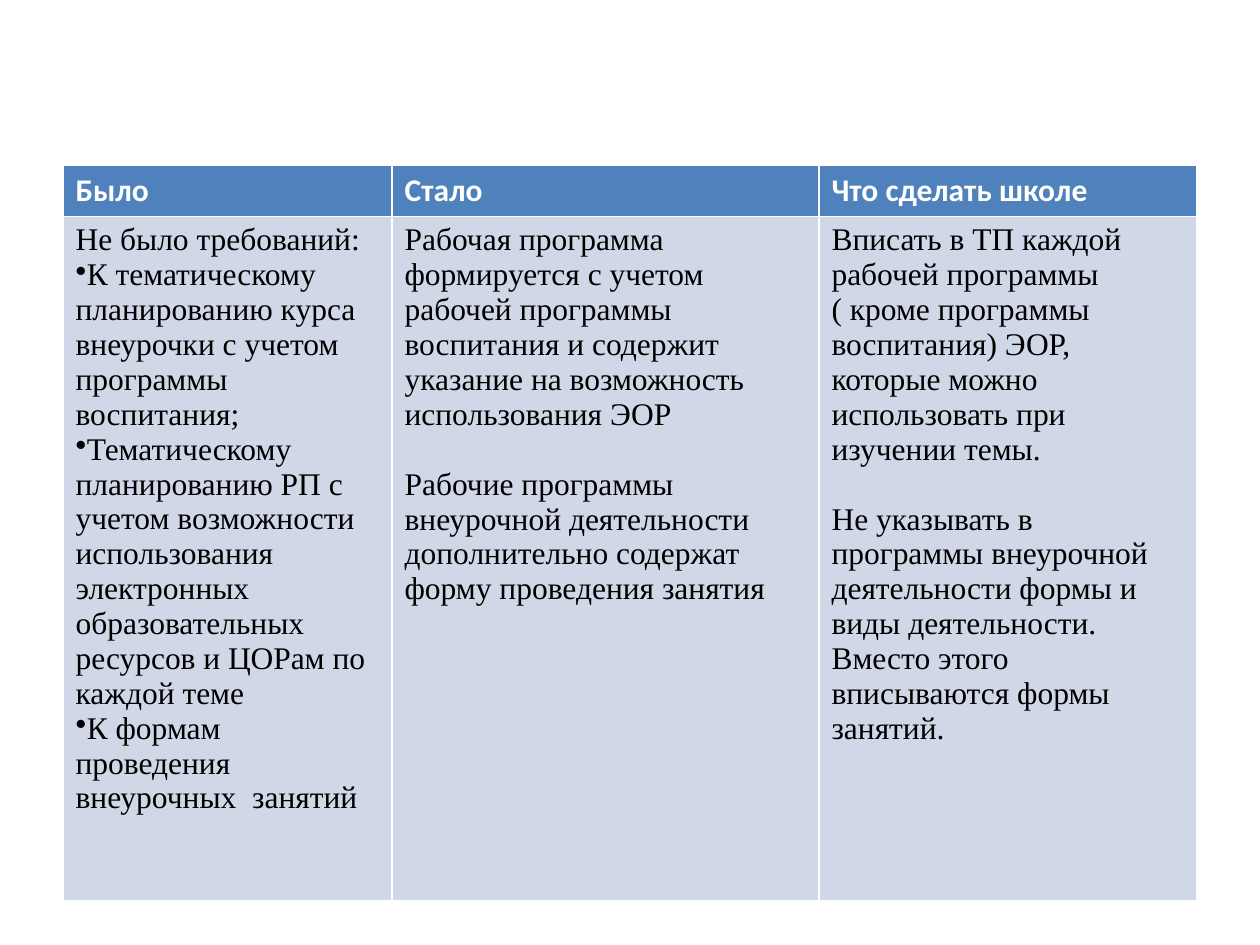
from lxml.etree import SubElement
from pptx import Presentation
from pptx.dml.color import RGBColor
from pptx.oxml.ns import qn
from pptx.util import Pt

WHITE = RGBColor(0xFF, 0xFF, 0xFF)
BLACK = RGBColor(0, 0, 0)
BLUE = RGBColor(0x4F, 0x81, 0xBD)
PALE = RGBColor(0xD0, 0xD8, 0xE8)

HEAD = {"name": "Calibri", "size": Pt(18), "bold": True}
BODY = {"name": "Times New Roman", "size": Pt(18), "bold": False}
WIDTHS = [188, 244, 216]
HEIGHTS = [28.8, 391.2]
GAP = 20

PLAIN, BULLET, APART = "plain", "bullet", "apart"
TITLES = ["Было", "Стало", "Что сделать школе"]
TEXTS = [
    [
        (PLAIN, "Не было требований:"),
        (BULLET, "К тематическому планированию курса внеурочки с учетом "
                 "программы воспитания;"),
        (BULLET, "Тематическому планированию РП с учетом возможности "
                 "использования электронных образовательных  ресурсов "
                 "и ЦОРам по каждой теме"),
        (BULLET, "К формам проведения внеурочных  занятий"),
    ],
    [
        (PLAIN, "Рабочая программа формируется с учетом рабочей программы "
                "воспитания и содержит указание на возможность "
                "использования ЭОР"),
        (APART, "Рабочие программы внеурочной деятельности дополнительно "
                "содержат форму проведения занятия"),
    ],
    [
        (PLAIN, "Вписать в ТП каждой рабочей программы ( кроме программы "
                "воспитания) ЭОР, которые можно использовать при изучении "
                "темы."),
        (APART, "Не указывать в программы внеурочной деятельности формы и "
                "виды деятельности. Вместо этого вписываются формы занятий."),
    ],
]


def add_bullet(para):
    """Give a paragraph a bullet without an indent."""
    props = para._p.get_or_add_pPr()
    props.set("marL", "0")
    props.set("indent", "0")
    SubElement(props, qn("a:buChar"), char="•")


def fill_cell(cell, items, style, ink, paper):
    """Fill a cell with styled paragraphs."""
    cell.fill.solid()
    cell.fill.fore_color.rgb = paper
    frame = cell.text_frame
    for i, (kind, text) in enumerate(items):
        para = frame.add_paragraph() if i else frame.paragraphs[0]
        if kind == APART:
            para.space_before = Pt(GAP)
        if kind == BULLET:
            add_bullet(para)
        run = para.add_run()
        run.text = text
        for key, value in style.items():
            setattr(run.font, key, value)
        run.font.color.rgb = ink


def add_changes(slide, left, top):
    """Add the table of changes with its top left corner at a point."""
    size = [Pt(sum(WIDTHS)), Pt(sum(HEIGHTS))]
    table = slide.shapes.add_table(
        len(HEIGHTS), len(WIDTHS), Pt(left), Pt(top), *size).table
    for row, height in zip(table.rows, HEIGHTS):
        row.height = Pt(height)
    for i, (width, title, items) in enumerate(zip(WIDTHS, TITLES, TEXTS)):
        table.columns[i].width = Pt(width)
        fill_cell(table.cell(0, i), [(PLAIN, title)], HEAD, WHITE, BLUE)
        fill_cell(table.cell(1, i), items, BODY, BLACK, PALE)


def main():
    """Build and save the slide."""
    deck = Presentation()
    deck.slide_width, deck.slide_height = Pt(720), Pt(540)
    slide = deck.slides.add_slide(deck.slide_layouts[6])
    add_changes(slide, 36, 94.5)
    deck.save("out.pptx")


if __name__ == "__main__":
    main()
